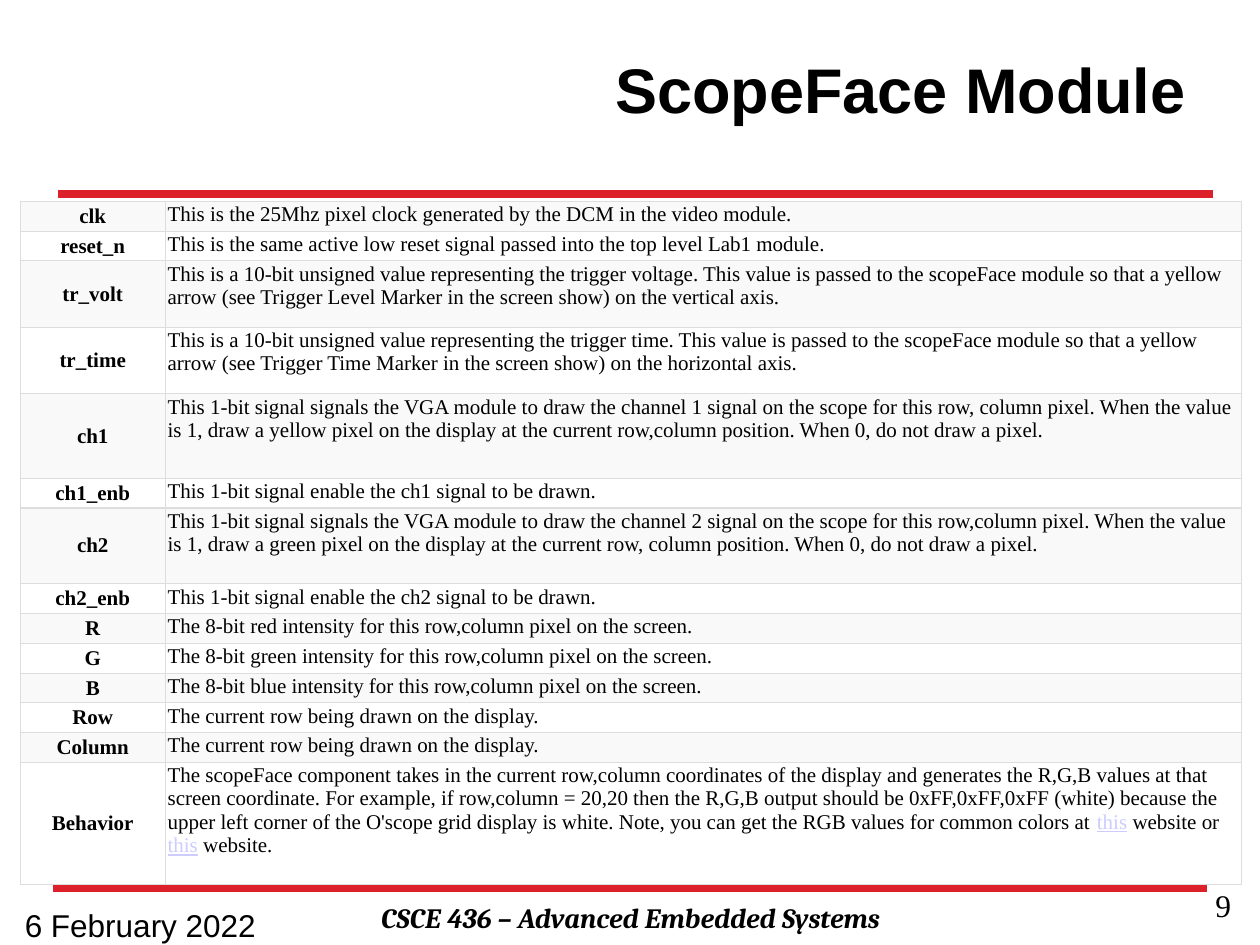
"""Build the ScopeFace Module signal table slide."""
from dataclasses import dataclass

import lxml.etree
import pptx
import pptx.dml.color
import pptx.enum.shapes
import pptx.enum.text
import pptx.oxml.ns
import pptx.util

Cm = pptx.util.Cm
RGBColor = pptx.dml.color.RGBColor
Align = pptx.enum.text.PP_ALIGN
Anchor = pptx.enum.text.MSO_ANCHOR
qn = pptx.oxml.ns.qn

BLACK = RGBColor(0x00, 0x00, 0x00)
WHITE = RGBColor(0xFF, 0xFF, 0xFF)
STRIPE = RGBColor(0xF9, 0xF9, 0xF9)
GRID = RGBColor(0xDD, 0xDD, 0xDD)
RED = RGBColor(0xDD, 0x21, 0x2B)
LINK = RGBColor(0xCC, 0xCC, 0xFF)
SERIF = "Times New Roman"
LINK_WORD = "this"


@dataclass(frozen=True)
class Signal:
    name: str
    meaning: tuple[str, ...]
    height: float = 0.6


@dataclass(frozen=True)
class Rule:
    left: float
    right: float
    y: float


@dataclass(frozen=True)
class Caption:
    text: str
    box: tuple[float, float, float, float]
    align: Align
    style: dict


def trigger(name: str, quantity: str, marker: str, axis: str) -> Signal:
    """Describe a trigger input."""
    return Signal(name, (
        f"This is a 10-bit unsigned value representing the trigger {quantity}. This value is passed "
        f"to the scopeFace module so that a yellow arrow (see Trigger {marker} Marker in the screen "
        f"show) on the {axis} axis.",), 1.34)


def channel(number: int, pixel: str, color: str, position: str, height: float) -> tuple[Signal, Signal]:
    """Describe a channel input and its enable."""
    return (
        Signal(f"ch{number}", (
            f"This 1-bit signal signals the VGA module to draw the channel {number} signal on the scope "
            f"for this {pixel} pixel. When the value is 1, draw a {color} pixel on the display at the "
            f"current {position} position. When 0, do not draw a pixel.",), height),
        Signal(f"ch{number}_enb", (f"This 1-bit signal enable the ch{number} signal to be drawn.",)),
    )


SIGNALS = (
    Signal("clk", ("This is the 25Mhz pixel clock generated by the DCM in the video module.",)),
    Signal("reset_n", ("This is the same active low reset signal passed into the top level Lab1 module.",)),
    trigger("tr_volt", "voltage", "Level", "vertical"),
    trigger("tr_time", "time", "Time", "horizontal"),
    *channel(1, "row, column", "yellow", "row,column", 1.7),
    *channel(2, "row,column", "green", "row, column", 1.53),
    *(Signal(color[0].upper(), (f"The 8-bit {color} intensity for this row,column pixel on the screen.",))
      for color in ("red", "green", "blue")),
    *(Signal(name, ("The current row being drawn on the display.",)) for name in ("Row", "Column")),
    Signal("Behavior", (
        "The scopeFace component takes in the current row,column coordinates of the display and "
        "generates the R,G,B values at that screen coordinate. For example, if row,column = 20,20 then "
        "the R,G,B output should be 0xFF,0xFF,0xFF (white) because the upper left corner of the O'scope "
        "grid display is white. Note, you can get the RGB values for common colors at ",
        LINK_WORD, " website or ", LINK_WORD, " website."), 2.46),
)
RULES = (Rule(1.07, 24.33, 17.91), Rule(1.17, 24.46, 3.91))
CAPTIONS = (
    Caption("CSCE 436 – Advanced Embedded Systems", (3.61, 18.03, 18.21, 0.94), Align.CENTER,
            dict(font="Cambria", size=16, bold=True, italic=True)),
    Caption("9", (19.15, 17.73, 5.92, 1.32), Align.RIGHT, dict(size=18)),
    Caption("6 February 2022", (0.25, 18.13, 5.92, 0.92), Align.LEFT, dict(font="Arial", size=18)),
)


def write(paragraph, text: str, *, font: str = SERIF, size: float = 12, color: RGBColor = BLACK,
          bold: bool = False, italic: bool = False, underline: bool = False) -> None:
    """Append a formatted run."""
    run = paragraph.add_run()
    run.text = text
    run.font.name = font
    run.font.size = pptx.util.Pt(size)
    run.font.color.rgb = color
    run.font.bold = bold
    run.font.italic = italic
    run.font.underline = underline


def draw_rule(slide, rule: Rule) -> None:
    """Draw a horizontal red rule."""
    line = slide.shapes.add_connector(pptx.enum.shapes.MSO_CONNECTOR.STRAIGHT,
                                      Cm(rule.left), Cm(rule.y), Cm(rule.right), Cm(rule.y))
    line.line.color.rgb = RED
    line.line.width = pptx.util.Pt(4.5)
    lxml.etree.SubElement(line._element.spPr, qn("a:effectLst"))


def draw_caption(slide, caption: Caption) -> None:
    """Draw a footer caption."""
    frame = slide.shapes.add_textbox(*map(Cm, caption.box)).text_frame
    frame.word_wrap = True
    frame.paragraphs[0].alignment = caption.align
    write(frame.paragraphs[0], caption.text, **caption.style)


def draw_title(slide, text: str) -> None:
    """Place the title at the upper right."""
    title = slide.shapes.title
    title.left, title.top, title.width, title.height = map(Cm, (5.31, 0.2, 18.85, 3.18))
    frame = title.text_frame
    frame.auto_size = pptx.enum.text.MSO_AUTO_SIZE.NONE
    frame.vertical_anchor = Anchor.MIDDLE
    frame.paragraphs[0].alignment = Align.RIGHT
    write(frame.paragraphs[0], text, font="Arial", size=36, bold=True)


def format_cell(cell, fill: RGBColor, anchor: Anchor, align: Align) -> None:
    """Set a cell's borders, fill, margins and alignment."""
    properties = cell._tc.get_or_add_tcPr()
    for side in ("a:lnL", "a:lnR", "a:lnT", "a:lnB"):
        border = lxml.etree.SubElement(properties, qn(side), w=str(pptx.util.Pt(0.75)))
        solid = lxml.etree.SubElement(border, qn("a:solidFill"))
        lxml.etree.SubElement(solid, qn("a:srgbClr"), val=str(GRID))
    cell.fill.solid()
    cell.fill.fore_color.rgb = fill
    cell.margin_left = cell.margin_right = Cm(0.05)
    cell.margin_top = cell.margin_bottom = Cm(0.03)
    cell.vertical_anchor = anchor
    cell.text_frame.paragraphs[0].alignment = align


def draw_signals(slide, signals: tuple[Signal, ...]) -> None:
    """Draw the table of signals and their meanings."""
    widths = (2.92, 21.69)
    table = slide.shapes.add_table(len(signals), len(widths), Cm(0.41), Cm(4.06), Cm(sum(widths)),
                                   Cm(sum(signal.height for signal in signals))).table
    table.first_row = table.horz_banding = False
    for column, width in zip(table.columns, widths):
        column.width = Cm(width)
    for index, (row, signal) in enumerate(zip(table.rows, signals)):
        row.height = Cm(signal.height)
        fill = WHITE if index % 2 else STRIPE
        name, meaning = row.cells
        format_cell(name, fill, Anchor.MIDDLE, Align.CENTER)
        write(name.text_frame.paragraphs[0], signal.name, bold=True)
        format_cell(meaning, fill, Anchor.TOP, Align.LEFT)
        for part in signal.meaning:
            linked = part == LINK_WORD
            write(meaning.text_frame.paragraphs[0], part, color=LINK if linked else BLACK, underline=linked)


def main() -> None:
    """Build and save the slide."""
    deck = pptx.Presentation()
    deck.slide_width, deck.slide_height = Cm(25.4), Cm(19.05)
    slide = deck.slides.add_slide(deck.slide_layouts.get_by_name("Title Only"))
    draw_title(slide, "ScopeFace Module")
    for rule in RULES:
        draw_rule(slide, rule)
    draw_signals(slide, SIGNALS)
    for caption in CAPTIONS:
        draw_caption(slide, caption)
    deck.save("out.pptx")


if __name__ == "__main__":
    main()
